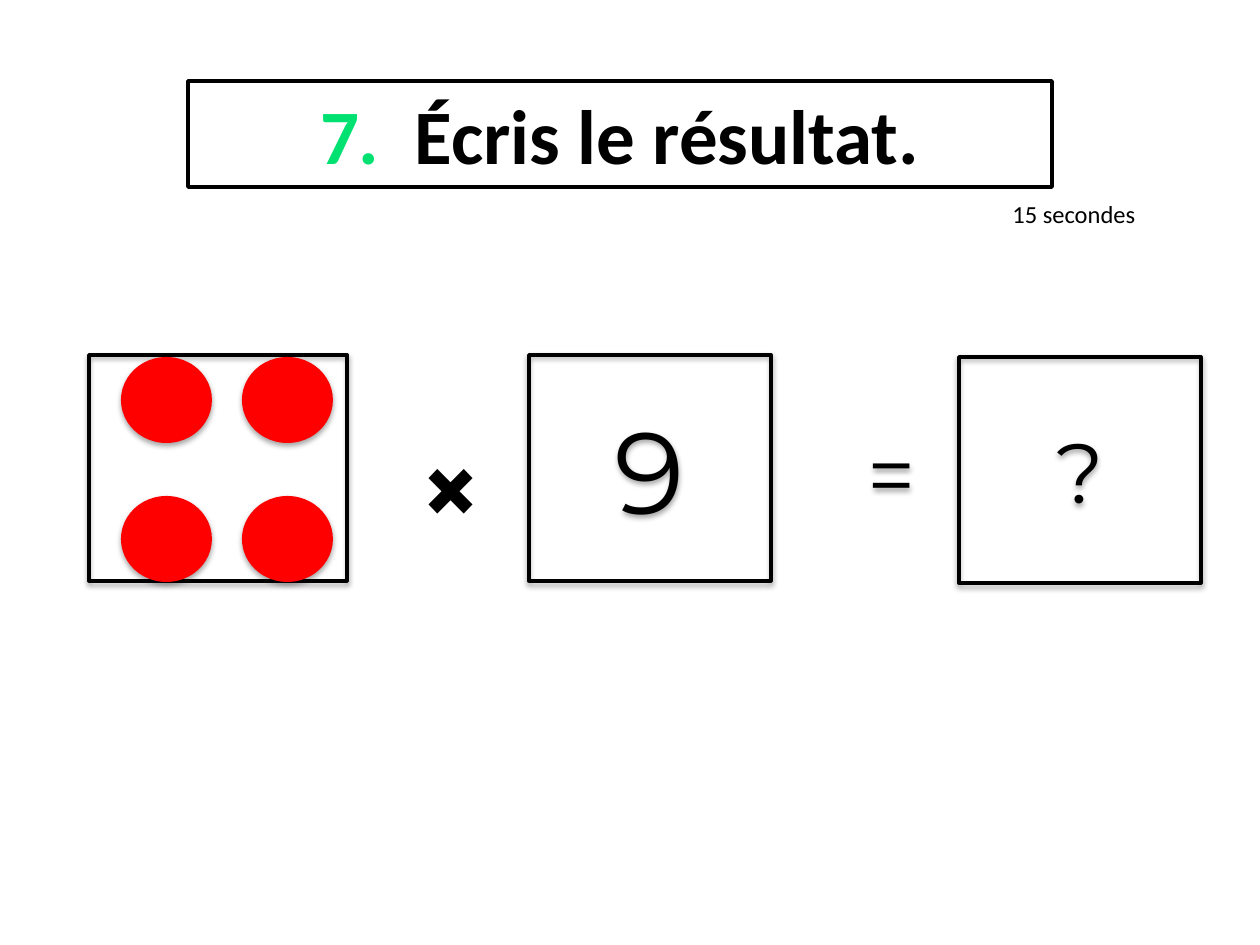
from dataclasses import dataclass
from itertools import product
from typing import Optional

from lxml import etree
from pptx import Presentation
from pptx import util as u
from pptx.dml import color
from pptx.enum import shapes, text
from pptx.oxml import ns

EMU_PER_PX = 914400 / 126
COLORS = {"ink": "000000", "paper": "FFFFFF", "number": "00E172", "dot": "FF0000"}


@dataclass(frozen=True)
class Words:
    wording: str
    size: int
    font: str = "Montserrat"
    color: str = "ink"
    bold: bool = False


@dataclass(frozen=True)
class Part:
    left: int
    top: int
    width: int
    height: int
    words: tuple[Words, ...] = ()
    fill: Optional[str] = None
    outlined: bool = False
    shadowed: bool = False
    geometry: shapes.MSO_SHAPE = shapes.MSO_SHAPE.RECTANGLE
    middle: bool = False
    centered: bool = True
    wrap: bool = True


def px(length: int) -> u.Emu:
    return u.Emu(round(length * EMU_PER_PX))


def rgb(name: str) -> color.RGBColor:
    return color.RGBColor.from_string(COLORS[name])


def add_shadow(shape) -> None:
    effects = shape._element.spPr.find(ns.qn("a:effectLst"))
    shadow = etree.SubElement(effects, ns.qn("a:outerShdw"), blurRad="40000",
                              dist="23000", dir="5400000", rotWithShape="0")
    tint = etree.SubElement(shadow, ns.qn("a:srgbClr"), val=COLORS["ink"])
    etree.SubElement(tint, ns.qn("a:alpha"), val="35000")


def write_words(shape, part: Part) -> None:
    frame = shape.text_frame
    frame.word_wrap = part.wrap
    frame.auto_size = (text.MSO_AUTO_SIZE.NONE if part.middle
                       else text.MSO_AUTO_SIZE.SHAPE_TO_FIT_TEXT)
    frame.vertical_anchor = text.MSO_ANCHOR.MIDDLE if part.middle else text.MSO_ANCHOR.TOP
    line = frame.paragraphs[0]
    line.alignment = text.PP_ALIGN.CENTER if part.centered else text.PP_ALIGN.LEFT
    for words in part.words:
        run = line.add_run()
        run.text = words.wording
        run.font.size = u.Pt(words.size)
        run.font.name = words.font
        run.font.bold = words.bold
        run.font.color.rgb = rgb(words.color)


def draw(container, part: Part) -> None:
    shape = container.add_shape(part.geometry, px(part.left), px(part.top),
                                px(part.width), px(part.height))
    if part.fill:
        shape.fill.solid()
        shape.fill.fore_color.rgb = rgb(part.fill)
    else:
        shape.fill.background()
    if part.outlined:
        shape.line.color.rgb = rgb("ink")
        shape.line.width = u.Pt(2)
    else:
        shape.line.fill.background()
    shape.shadow.inherit = False
    if part.shadowed:
        add_shadow(shape)
    if part.words:
        write_words(shape, part)


EXERCISE = (
    Part(188, 81, 864, 106,
         (Words("7.", 44, "Calibri", "number", True),
          Words("  Écris le résultat.", 44, "Calibri", bold=True)),
         fill="paper", outlined=True),
    Part(1000, 193, 150, 43, (Words("15 secondes", 14, "Calibri"),),
         fill="paper", centered=False, wrap=False),
    Part(373, 417, 156, 140, (Words("×", 60, bold=True),)),
    Part(529, 355, 242, 226, (Words("9", 66),), outlined=True, shadowed=True, middle=True),
    Part(959, 357, 242, 226, (Words("?", 48),), outlined=True, shadowed=True, middle=True),
    Part(771, 359, 242, 226, (Words("=", 48),), shadowed=True, middle=True),
)
DICE = (
    Part(89, 355, 258, 226, outlined=True, shadowed=True),
    *(Part(121 + 121 * column, 357 + 139 * row, 91, 86, fill="dot", shadowed=True,
           geometry=shapes.MSO_SHAPE.OVAL)
      for row, column in product(range(2), repeat=2)),
)


def main() -> None:
    deck = Presentation()
    deck.slide_width, deck.slide_height = px(1260), px(945)
    slide = deck.slides.add_slide(deck.slide_layouts[6])
    for part in EXERCISE:
        draw(slide.shapes, part)
    dice = slide.shapes.add_group_shape()
    for part in DICE:
        draw(dice.shapes, part)
    deck.save("out.pptx")


if __name__ == "__main__":
    main()
